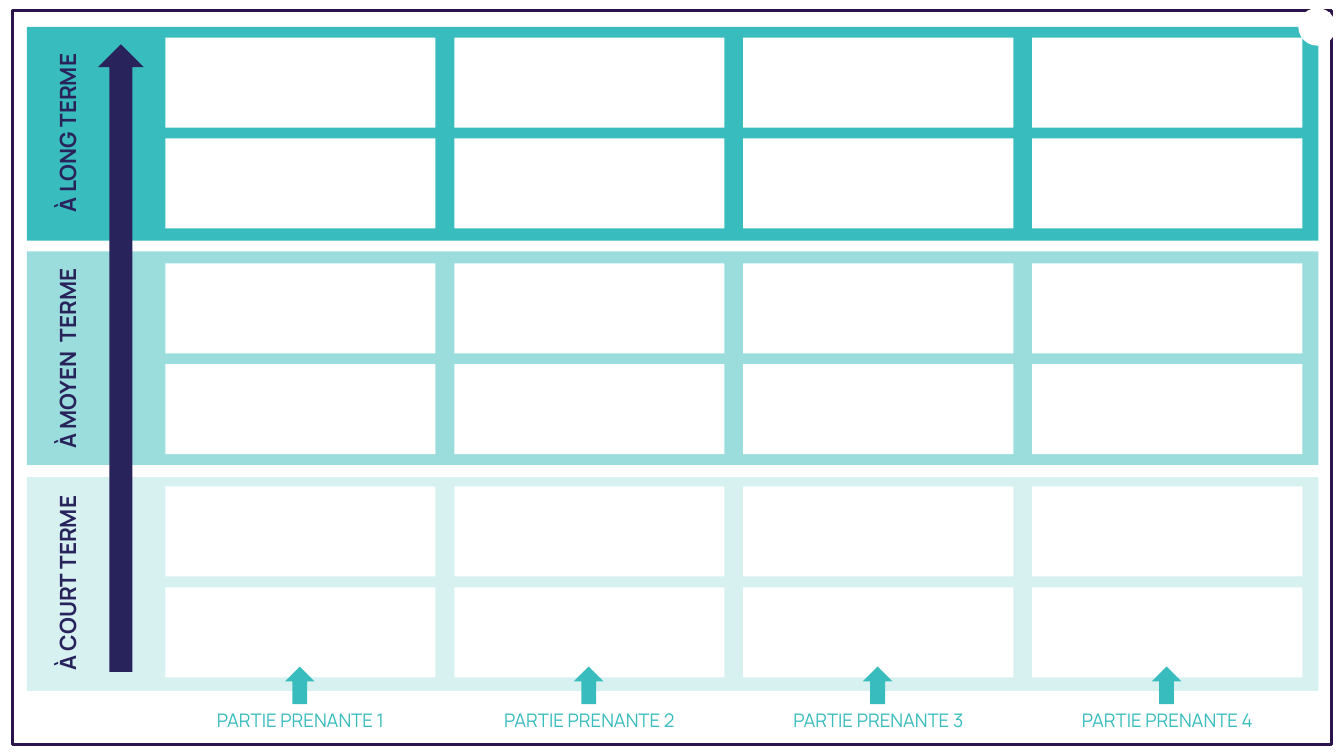
from dataclasses import dataclass

from lxml import etree
from pptx import Presentation
from pptx.dml.color import RGBColor
from pptx.enum.shapes import MSO_SHAPE
from pptx.enum.text import MSO_ANCHOR, PP_ALIGN
from pptx.oxml.ns import qn
from pptx.util import Inches, Pt

RECT = MSO_SHAPE.RECTANGLE
ARROW = MSO_SHAPE.UP_ARROW
OVAL = MSO_SHAPE.OVAL
MIDDLE = MSO_ANCHOR.MIDDLE
CENTER = PP_ALIGN.CENTER

FONT = "Manrope"
TEAL = "39BCBD"
NAVY = "29235C"
WHITE = "FFFFFF"
EDGE = "2D134B"

WIDTH = 10
HEIGHT = WIDTH * 9 / 16
LEFT, STEP = 1.23, 2.15
CELL_W, CELL_H = 2.01, 0.67
ROW_STEP = 0.75
COLS = 4


@dataclass
class Box:
    left: float
    top: float
    width: float
    height: float

    def lengths(self) -> list:
        return [Inches(v) for v in (self.left, self.top, self.width, self.height)]


@dataclass
class Band:
    label: str
    top: float
    text_top: float
    cell_top: float
    alpha: int


BANDS = [
    Band("À COURT TERME", 3.55, 4.03, 3.62, 20),
    Band("À MOYEN  TERME", 1.87, 2.36, 1.96, 50),
    Band("À LONG TERME", 0.2, 0.68, 0.28, 100),
]


def color(code: str) -> RGBColor:
    return RGBColor.from_string(code)


def draw(slide, kind, box: Box, fill: str, alpha: int = 100):
    shape = slide.shapes.add_shape(kind, *box.lengths())
    shape.shadow.inherit = False
    shape.fill.solid()
    shape.fill.fore_color.rgb = color(fill)
    shape.line.fill.background()
    if alpha < 100:
        tint = shape.element.spPr.find(".//" + qn("a:srgbClr"))
        etree.SubElement(tint, qn("a:alpha")).set("val", str(alpha * 1000))
    return shape


def write(slide, text: str, box: Box, size: int, ink: str, bold: bool = False, turn: int = 0) -> None:
    label = slide.shapes.add_textbox(*box.lengths())
    label.rotation = turn
    frame = label.text_frame
    frame.word_wrap = True
    frame.vertical_anchor = MIDDLE
    frame.margin_left = frame.margin_right = Inches(0.1)
    frame.margin_top = frame.margin_bottom = Inches(0.1)
    frame.text = text
    para = frame.paragraphs[0]
    para.alignment = CENTER
    font = para.runs[0].font
    font.name = FONT
    font.size = Pt(size)
    font.bold = bold
    font.color.rgb = color(ink)


def main() -> None:
    deck = Presentation()
    deck.slide_width = Inches(WIDTH)
    deck.slide_height = Inches(HEIGHT)
    slide = deck.slides.add_slide(deck.slide_layouts[6])

    frame = draw(slide, RECT, Box(0.09, 0.08, 9.82, 5.46), WHITE)
    frame.fill.background()
    frame.line.color.rgb = color(EDGE)
    frame.line.width = Pt(1.5)

    for band in BANDS:
        draw(slide, RECT, Box(0.2, band.top, 9.61, 1.59), TEAL, band.alpha)
    draw(slide, ARROW, Box(0.73, 0.33, 0.34, 4.67), NAVY)

    for band in reversed(BANDS):
        write(slide, band.label, Box(-0.29, band.text_top, 1.58, 0.62), 12, NAVY, True, 270)
        for col in range(COLS):
            for row in range(2):
                top = band.cell_top + row * ROW_STEP
                draw(slide, RECT, Box(LEFT + col * STEP, top, CELL_W, CELL_H), WHITE)

    for col in range(COLS):
        left = LEFT + col * STEP
        write(slide, f"PARTIE PRENANTE {col + 1}", Box(left, 5.24, CELL_W, 0.23), 10, TEAL)
        draw(slide, ARROW, Box(left + 0.89, 4.96, 0.22, 0.28), TEAL)

    draw(slide, OVAL, Box(9.66, 0.06, 0.28, 0.28), WHITE)
    deck.save("out.pptx")


if __name__ == "__main__":
    main()
